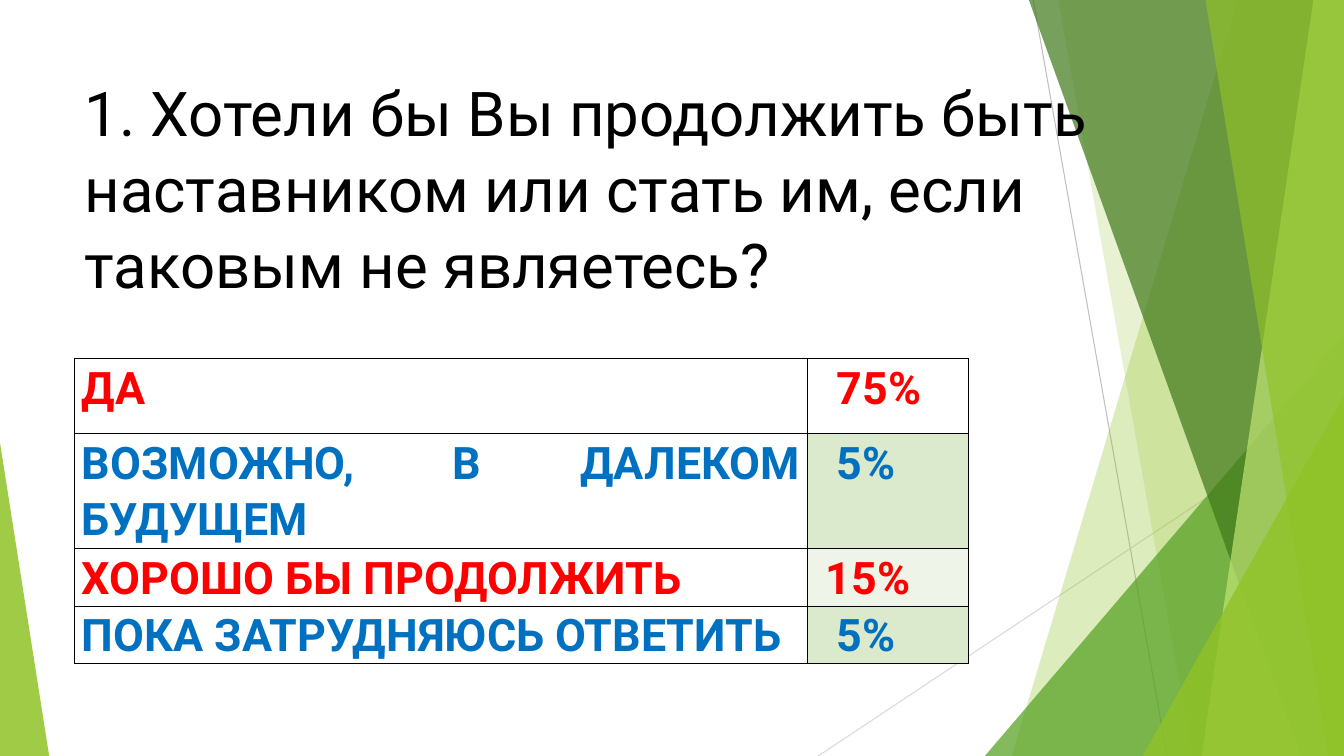
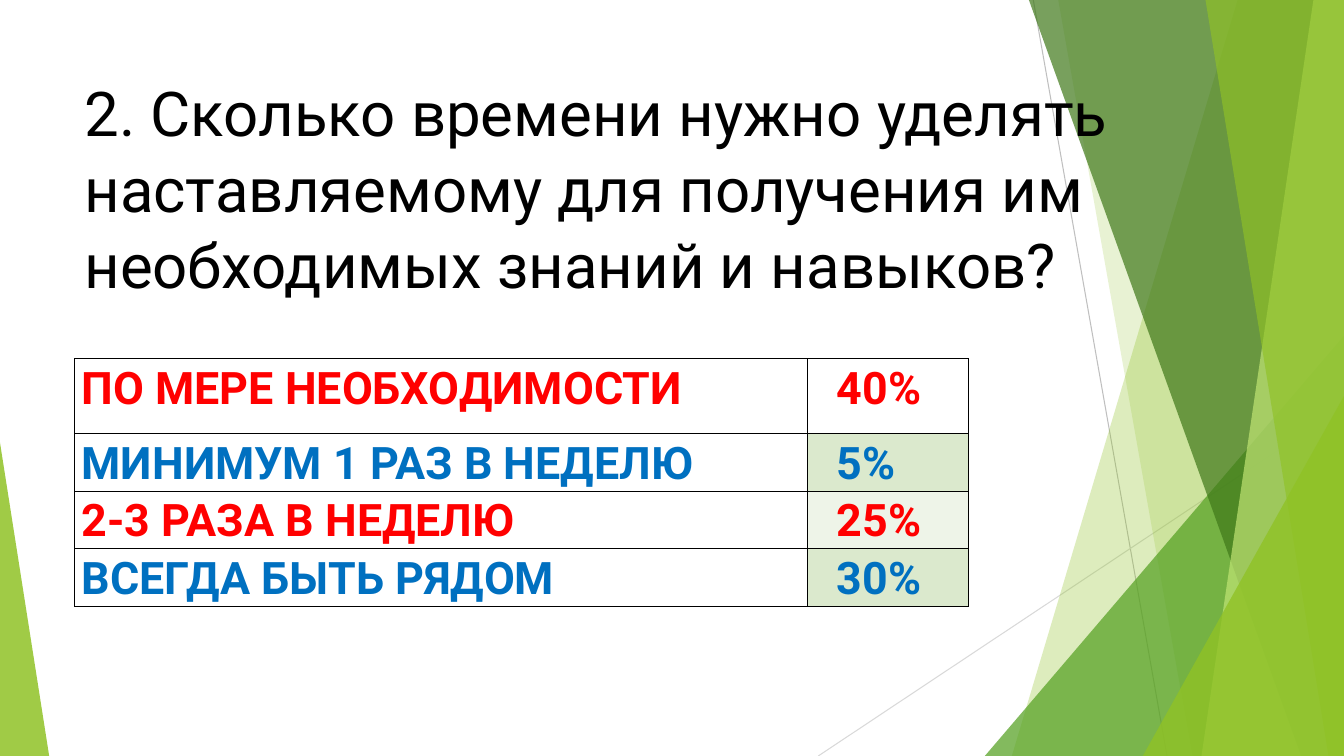
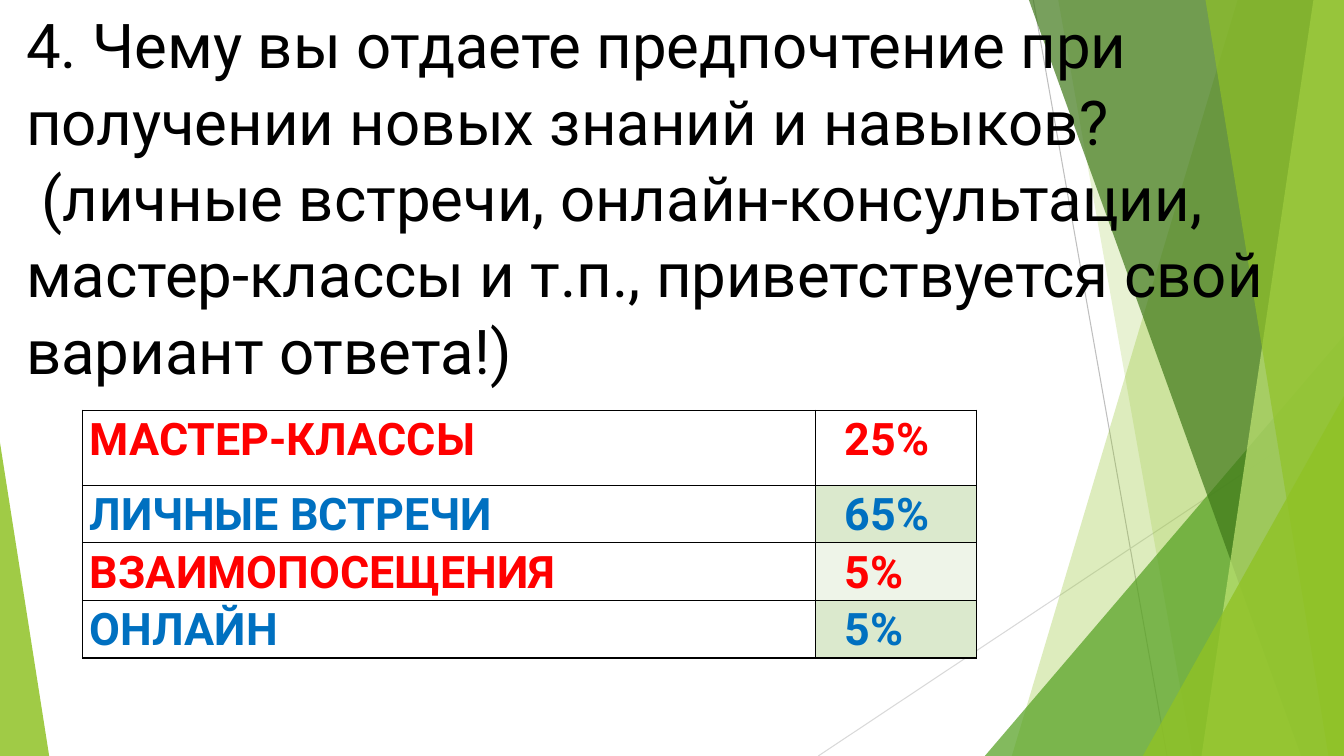
from lxml.etree import SubElement
from pptx import Presentation
from pptx.dml.color import RGBColor
from pptx.enum.shapes import MSO_CONNECTOR as CONN, MSO_SHAPE as SHAPE
from pptx.enum.text import MSO_ANCHOR as ANCHOR, PP_ALIGN as ALIGN
from pptx.oxml.ns import qn
from pptx.util import Cm, Pt

WIDTH, HEIGHT = 33.87, 19.05
FONT = "Roboto"
BLACK, RED, BLUE = "000000", "FF0000", "0070C0"
LIME, GREEN, DARK, PALE = "90C226", "54A021", "3F7819", "C0E474"
VALUE_FILLS = [None, "DBE9CD", "EEF4E8", "DBE9CD"]
COLUMNS = [18.47, 4.06]
FIRST_ROW, ROW = 1.89, 1.41
INSET, SPACE = 0.18, 0.28

LINES = [
    ((26.04, 0), (29.41, HEIGHT), "BFBFBF"),
    ((WIDTH, 10.24), (20.62, HEIGHT), "D9D9D9"),
]
FACETS = [
    ("band", 31.19, 25.5, LIME, 30),
    ("band", 26.67, 30.05, LIME, 20),
    ("corner", 24.82, 8.46, GREEN, 72),
    ("band", 25.93, 32.79, DARK, 70),
    ("band", 33.1, 30.28, PALE, 70),
    ("band", 30.38, 33.48, LIME, 65),
    ("corner", 28.8, 9.98, LIME, 80),
]
LEFT_CORNER = (1.24, 11.15, LIME, 85)

SLIDES = [
    {
        "title": ["1. Хотели бы Вы продолжить быть наставником или стать им, "
                  "если таковым не являетесь?"],
        "title_box": (1.88, 1.7, 26.67, 3.66),
        "table_at": (1.88, 9.04),
        "rows": [
            ("ДА", "75%", 2),
            ("ВОЗМОЖНО, В ДАЛЕКОМ БУДУЩЕМ", "5%", 2),
            ("ХОРОШО БЫ ПРОДОЛЖИТЬ", "15%", 1),
            ("ПОКА ЗАТРУДНЯЮСЬ ОТВЕТИТЬ", "5%", 2),
        ],
    },
    {
        "title": ["2. Сколько времени нужно уделять наставляемому для "
                  "получения им необходимых знаний и навыков?"],
        "title_box": (1.88, 1.7, 26.67, 3.66),
        "table_at": (1.88, 9.04),
        "rows": [
            ("ПО МЕРЕ НЕОБХОДИМОСТИ", "40%", 2),
            ("МИНИМУМ 1 РАЗ В НЕДЕЛЮ", "5%", 2),
            ("2-3 РАЗА В НЕДЕЛЮ", "25%", 2),
            ("ВСЕГДА БЫТЬ РЯДОМ", "30%", 2),
        ],
    },
    {
        "title": ["4. Чему вы отдаете предпочтение при получении новых знаний "
                  "и навыков?",
                  " (личные встречи, онлайн-консультации, мастер-классы и т.п., "
                  "приветствуется свой вариант ответа!)"],
        "title_box": (0.41, 0, 33.46, 3.66),
        "table_at": (2.08, 10.34),
        "rows": [
            ("МАСТЕР-КЛАССЫ", "25%", 2),
            ("ЛИЧНЫЕ ВСТРЕЧИ", "65%", 2),
            ("ВЗАИМОПОСЕЩЕНИЯ", "5%", 2),
            ("ОНЛАЙН", "5%", 2),
        ],
    },
]


def rgb(color):
    return RGBColor.from_string(color)


def paint(sp, color, opacity):
    sp.shadow.inherit = False
    sp.line.fill.background()
    sp.fill.solid()
    sp.fill.fore_color.rgb = rgb(color)
    clr = sp.fill._xPr.find(qn("a:solidFill"))[0]
    SubElement(clr, qn("a:alpha")).set("val", str(opacity * 1000))


def add_line(s, start, end, color):
    c = s.shapes.add_connector(CONN.STRAIGHT, *map(Cm, start + end))
    c.line.color.rgb = rgb(color)
    c.line.width = Pt(0.75)
    SubElement(c._element.spPr, qn("a:effectLst"))


def add_band(s, top_x, bottom_x, color, opacity):
    fb = s.shapes.build_freeform(Cm(top_x), 0)
    corners = [(WIDTH, 0), (WIDTH, HEIGHT), (bottom_x, HEIGHT)]
    fb.add_line_segments([(Cm(x), Cm(y)) for x, y in corners], close=True)
    paint(fb.convert_to_shape(), color, opacity)


def add_corner(s, left, right, top, apex, color, opacity):
    sp = s.shapes.add_shape(SHAPE.ISOSCELES_TRIANGLE, Cm(left), Cm(top),
                            Cm(right - left), Cm(HEIGHT - top))
    sp.adjustments[0] = apex
    paint(sp, color, opacity)


def add_backdrop(s):
    for line in LINES:
        add_line(s, *line)
    for kind, x, end, color, opacity in FACETS:
        if kind == "band":
            add_band(s, x, end, color, opacity)
        else:
            add_corner(s, x, WIDTH, end, 1, color, opacity)
    right, top, color, opacity = LEFT_CORNER
    add_corner(s, 0, right, top, 0, color, opacity)


def write(p, text, size, color, spacing, bold=False):
    p.line_spacing = spacing
    r = p.add_run()
    r.text = text
    r.font.name = FONT
    r.font.size = Pt(size)
    r.font.bold = bold
    r.font.color.rgb = rgb(color)


def add_title(s, lines, box):
    tf = s.shapes.add_textbox(*map(Cm, box)).text_frame
    tf.word_wrap = True
    tf.vertical_anchor = ANCHOR.TOP
    for i, line in enumerate(lines):
        p = tf.add_paragraph() if i else tf.paragraphs[0]
        write(p, line, 44.1, BLACK, 1.03)


def add_borders(cell):
    tcPr = cell._tc.get_or_add_tcPr()
    for i, side in enumerate(("a:lnL", "a:lnR", "a:lnT", "a:lnB")):
        ln = tcPr.makeelement(qn(side), {"w": str(Pt(1))})
        fill = SubElement(ln, qn("a:solidFill"))
        SubElement(fill, qn("a:srgbClr")).set("val", BLACK)
        tcPr.insert(i, ln)


def fill_cell(cell, text, color, fill, indent):
    cell.margin_left, cell.margin_right = Cm(INSET + indent), Cm(INSET)
    cell.margin_top = cell.margin_bottom = 0
    if fill:
        cell.fill.solid()
        cell.fill.fore_color.rgb = rgb(fill)
    else:
        cell.fill.background()
    add_borders(cell)
    p = cell.text_frame.paragraphs[0]
    p.alignment = ALIGN.JUSTIFY
    write(p, text, 32, color, 1.07, bold=True)


def add_answers(s, rows, at):
    heights = [FIRST_ROW] + [ROW] * (len(rows) - 1)
    size = (sum(COLUMNS), sum(heights))
    table = s.shapes.add_table(len(rows), len(COLUMNS), *map(Cm, at + size)).table
    table.first_row = table.horz_banding = False
    for column, width in zip(table.columns, COLUMNS):
        column.width = Cm(width)
    for i, (answer, share, spaces) in enumerate(rows):
        table.rows[i].height = Cm(heights[i])
        color = BLUE if i % 2 else RED
        fill_cell(table.cell(i, 0), answer, color, None, 0)
        fill_cell(table.cell(i, 1), share, color, VALUE_FILLS[i], spaces * SPACE)


def main():
    prs = Presentation()
    prs.slide_width, prs.slide_height = Cm(WIDTH), Cm(HEIGHT)
    for content in SLIDES:
        s = prs.slides.add_slide(prs.slide_layouts[6])
        add_backdrop(s)
        add_title(s, content["title"], content["title_box"])
        add_answers(s, content["rows"], content["table_at"])
    prs.save("out.pptx")


if __name__ == "__main__":
    main()
